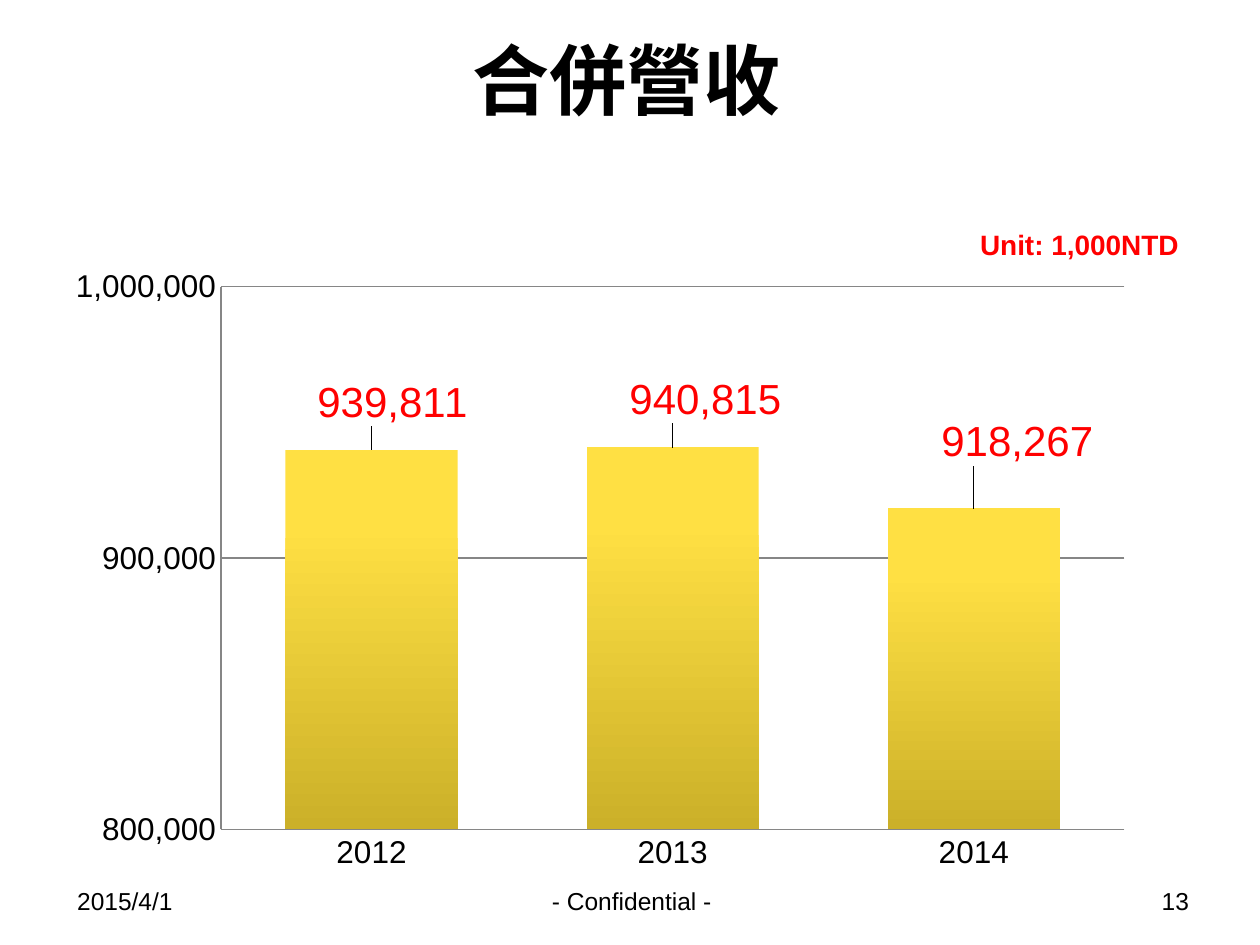
from pptx import Presentation
from pptx.chart.data import CategoryChartData
from pptx.dml.color import RGBColor
from pptx.enum.chart import XL_CHART_TYPE as CT, XL_LABEL_POSITION as LP, XL_TICK_MARK as TM
from pptx.enum.text import MSO_ANCHOR as MA, PP_ALIGN as PA
from pptx.oxml import parse_xml
from pptx.oxml.ns import nsdecls
from pptx.util import Pt

BLACK = RGBColor(0x00, 0x00, 0x00)
RED = RGBColor(0xFF, 0x00, 0x00)
GRAY = RGBColor(0x86, 0x86, 0x86)
YELLOW = RGBColor(0xFF, 0xE0, 0x43)
GOLD = RGBColor(0xCB, 0xB0, 0x29)


def add_text(s, text, box, size, align=PA.LEFT, color=BLACK, bold=False,
             font="Arial", anchor=MA.TOP):
    tf = s.shapes.add_textbox(*map(Pt, box)).text_frame
    tf.word_wrap = True
    tf.vertical_anchor = anchor
    p = tf.paragraphs[0]
    p.text = text
    p.alignment = align
    p.font.name, p.font.size, p.font.bold = font, Pt(size), bold
    p.font.color.rgb = color


def manual_layout(x, y, w=None, h=None):
    """Chart layout in fractions: an offset, or a whole inner plot area."""
    tags = f'<c:x val="{x}"/><c:y val="{y}"/>'
    if w:
        tags = ('<c:layoutTarget val="inner"/><c:xMode val="edge"/><c:yMode val="edge"/>'
                f'{tags}<c:w val="{w}"/><c:h val="{h}"/>')
    return parse_xml(f'<c:layout {nsdecls("c")}><c:manualLayout>{tags}'
                     '</c:manualLayout></c:layout>')


prs = Presentation()
prs.slide_width, prs.slide_height = Pt(720), Pt(540)
s = prs.slides.add_slide(prs.slide_layouts[6])

# Title
add_text(s, "合併營收", (34, 0, 648, 90), 44, PA.CENTER, bold=True,
         font="TeX Gyre Schola", anchor=MA.MIDDLE)

# Revenue chart
data = CategoryChartData(number_format="#,##0")
data.categories = ["2012", "2013", "2014"]
data.add_series("Series 1", [939811, 940815, 918267])
chart = s.shapes.add_chart(CT.COLUMN_CLUSTERED, Pt(33), Pt(146), Pt(622), Pt(356.5), data).chart
chart.has_legend = chart.has_title = False
chart.font.name, chart.font.size = "Arial", Pt(18)
chart.font.color.rgb = BLACK

# Plot area
plot_area = chart._chartSpace.chart.plotArea
for old in plot_area.findall("{*}layout"):
    plot_area.remove(old)
plot_area.insert(0, manual_layout(0.15, 0.05, 0.83, 0.87))

# Axes
values = chart.value_axis
values.minimum_scale, values.maximum_scale, values.major_unit = 800000, 1000000, 100000
values.has_major_gridlines = True
values.tick_labels.number_format = "#,##0"
values.tick_labels.number_format_is_linked = False
for axis in (values, chart.category_axis):
    axis.major_tick_mark = axis.minor_tick_mark = TM.NONE
for line in (values.format.line, chart.category_axis.format.line, values.major_gridlines.format.line):
    line.color.rgb = GRAY
    line.width = Pt(0.75)

# Columns
plot = chart.plots[0]
plot.gap_width = 75
plot.vary_by_categories = False
series = plot.series[0]
fill = series.format.fill
fill.gradient()
fill.gradient_angle = 270
for stop, position, color in zip(fill.gradient_stops, (0.2, 1), (YELLOW, GOLD)):
    stop.position = position
    stop.color.rgb = color

# Value labels, each shifted from its column
labels = series.data_labels
labels.show_value = True
labels.number_format = "#,##0"
labels.number_format_is_linked = False
for i, offset in enumerate([(0.02, -0.03), (0.03, -0.03), (0.04, -0.06)]):
    label = series.points[i].data_label
    label.font.name, label.font.size = "Arial", Pt(24)
    label.font.color.rgb = RED
    label.position = LP.OUTSIDE_END
for d, offset in zip(labels._element.findall("{*}dLbl"),
                     [(0.02, -0.03), (0.03, -0.03), (0.04, -0.06)]):
    d.insert(1, manual_layout(*offset))

# Footer
for text, left, width, align in (("- Confidential -", 247, 228, PA.CENTER),
                                 ("13", 518.5, 168, PA.RIGHT),
                                 ("2015/4/1", 37, 168, PA.LEFT)):
    add_text(s, text, (left, 502.5, width, 37.5), 14, align)

# Unit note
add_text(s, "Unit: 1,000NTD", (553, 126.5, 138, 26.5), 16, color=RED, bold=True)

prs.save("out.pptx")
